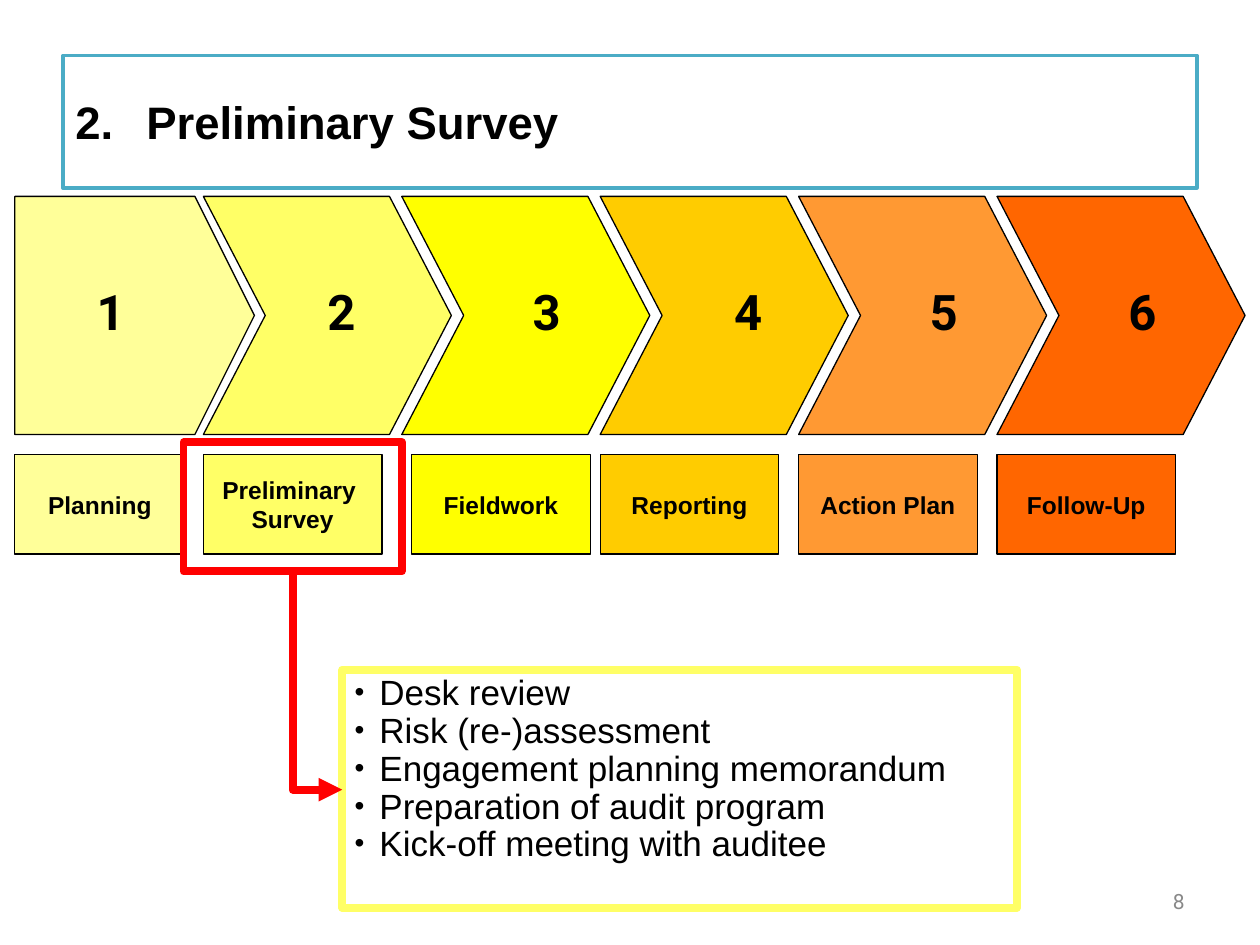
from dataclasses import dataclass

from pptx import Presentation
from pptx.dml.color import RGBColor
from pptx.enum.shapes import MSO_CONNECTOR, MSO_SHAPE as Preset
from pptx.enum.text import MSO_ANCHOR as Anchor, PP_ALIGN as Align
from pptx.oxml.ns import qn
from pptx.util import Cm, Pt
from lxml.etree import SubElement

COLORS = {
    "black": "000000", "white": "FFFFFF", "grey": "898989",
    "teal": "4BACC6", "red": "FF0000", "frame": "FFFF66",
}
PITCH, FIRST_CHEVRON = 4.0, 4.1  # cm


@dataclass
class Stage:
    lines: list[str]
    fill: str
    number_left: float


STAGES = [
    Stage(["Planning"], "FFFF99", 1.7),
    Stage(["Preliminary ", "Survey"], "FFFF66", 6.35),
    Stage(["Fieldwork"], "FFFF00", 10.49),
    Stage(["Reporting"], "FFCC00", 14.55),
    Stage(["Action Plan"], "FF9933", 18.49),
    Stage(["Follow-Up"], "FF6600", 22.5),
]
TASKS = [
    "Desk review",
    "Risk (re-)assessment",
    "Engagement planning memorandum",
    "Preparation of audit program",
    "Kick-off meeting with auditee",
]


def rgb(value: str) -> RGBColor:
    return RGBColor.from_string(value)


def add_box(page, preset, left: float, top: float, width: float, height: float,
            fill: str | None = None, line: str = COLORS["black"], weight: float = 0.75):
    box = page.shapes.add_shape(preset, Cm(left), Cm(top), Cm(width), Cm(height))
    box.shadow.inherit = False
    if fill:
        box.fill.solid()
        box.fill.fore_color.rgb = rgb(fill)
    else:
        box.fill.background()
    box.line.color.rgb = rgb(line)
    box.line.width = Pt(weight)
    return box


def add_text_box(page, left: float, top: float, width: float, height: float):
    return page.shapes.add_textbox(Cm(left), Cm(top), Cm(width), Cm(height))


def write(box, lines: list[str], size: float, font: str = "Arial",
          color: str = COLORS["black"], bold: bool = False, align=Align.LEFT,
          anchor=Anchor.TOP, wrap: bool = False, spacing: float | None = None,
          indent: float = 0, bullet: dict | None = None) -> None:
    frame = box.text_frame
    frame.word_wrap = wrap
    frame.vertical_anchor = anchor
    for index, line in enumerate(lines):
        para = frame.add_paragraph() if index else frame.paragraphs[0]
        para.alignment = align
        if spacing:
            para.line_spacing = spacing
        if bullet:
            properties = para._p.get_or_add_pPr()
            properties.set("marL", str(Cm(indent)))
            properties.set("indent", str(-Cm(indent)))
            for tag, attributes in bullet.items():
                SubElement(properties, qn(tag), attributes)
        span = para.add_run()
        span.text = line
        span.font.name = font
        span.font.size = Pt(size)
        span.font.bold = bold
        span.font.color.rgb = rgb(color)


def add_stage(page, index: int, stage: Stage) -> None:
    left = FIRST_CHEVRON + PITCH * (index - 1)
    label_left, label_width = left, 3.6
    if index == 0:
        left = label_left = 0.3
        label_width = 3.43
        arrow = add_box(page, Preset.PENTAGON, left, 3.96, 4.83, 4.8, stage.fill)
        arrow.adjustments[0] = 0.25
    else:
        arrow = add_box(page, Preset.CHEVRON, left, 3.96, 5, 4.8, stage.fill)
        arrow.adjustments[0] = 0.26
    if index == 2:
        label_left += 0.2  # room for the red highlight
    label = add_box(page, Preset.RECTANGLE, label_left, 9.17, label_width, 2, stage.fill)
    write(label, stage.lines, 14, bold=True, align=Align.CENTER, anchor=Anchor.MIDDLE)
    number = add_text_box(page, stage.number_left, 5.56, 1.14, 1.45)
    write(number, [str(index + 1)], 28, font="Roboto", bold=True)


def add_elbow_arrow(page, start: tuple[float, float], end: tuple[float, float]) -> None:
    """Go down from start, then right to end."""
    half_drop, half_run = (end[1] - start[1]) / 2, (end[0] - start[0]) / 2
    middle_x, middle_y = start[0] + half_run, start[1] + half_drop
    # Mirrored and turned by 270 degrees, so width and height trade places
    arrow = page.shapes.add_connector(
        MSO_CONNECTOR.ELBOW,
        Cm(middle_x + half_drop), Cm(middle_y - half_run),
        Cm(middle_x - half_drop), Cm(middle_y + half_run))
    arrow.line.color.rgb = rgb(COLORS["red"])
    arrow.line.width = Pt(4.5)
    properties = arrow._element.spPr
    properties.find(qn("a:xfrm")).set("rot", str(270 * 60000))
    properties.find(qn("a:prstGeom")).set("prst", "bentConnector2")
    SubElement(arrow.line._get_or_add_ln(), qn("a:tailEnd"), {"type": "triangle"})
    SubElement(properties, qn("a:effectLst"))


def main() -> None:
    deck = Presentation()
    deck.slide_width, deck.slide_height = Cm(25.4), Cm(19.05)
    page = deck.slides.add_slide(deck.slide_layouts[6])

    # Page number
    page_number = add_text_box(page, 18.2, 17.65, 5.93, 1.02)
    write(page_number, ["8"], 12, font="Roboto", color=COLORS["grey"],
          align=Align.RIGHT, anchor=Anchor.MIDDLE, wrap=True)

    # Process stages
    for index, stage in enumerate(STAGES):
        add_stage(page, index, stage)

    # Tasks of the highlighted stage
    tasks = add_text_box(page, 6.9, 13.49, 12.55, 4.11)
    write(tasks, TASKS, 20, spacing=0.9, indent=0.5,
          bullet={"a:buSzPct": {"val": "80000"}, "a:buFont": {"typeface": "Arial"},
                  "a:buChar": {"char": "•"}})

    # Highlight, task frame and the arrow between them
    add_box(page, Preset.RECTANGLE, 3.7, 8.92, 4.4, 2.6, line=COLORS["red"], weight=4.5)
    add_box(page, Preset.RECTANGLE, 6.9, 13.5, 13.6, 4.8, line=COLORS["frame"], weight=4.5)
    add_elbow_arrow(page, (5.9, 11.52), (6.9, 15.92))

    # Title
    title = add_box(page, Preset.RECTANGLE, 1.27, 1.12, 22.86, 2.67,
                    COLORS["white"], COLORS["teal"], 2)
    write(title, ["Preliminary Survey"], 26, bold=True, anchor=Anchor.MIDDLE, wrap=True,
          indent=1.43, bullet={"a:buFont": {"typeface": "Arial"},
                               "a:buAutoNum": {"type": "arabicPeriod", "startAt": "2"}})

    deck.save("out.pptx")


if __name__ == "__main__":
    main()
